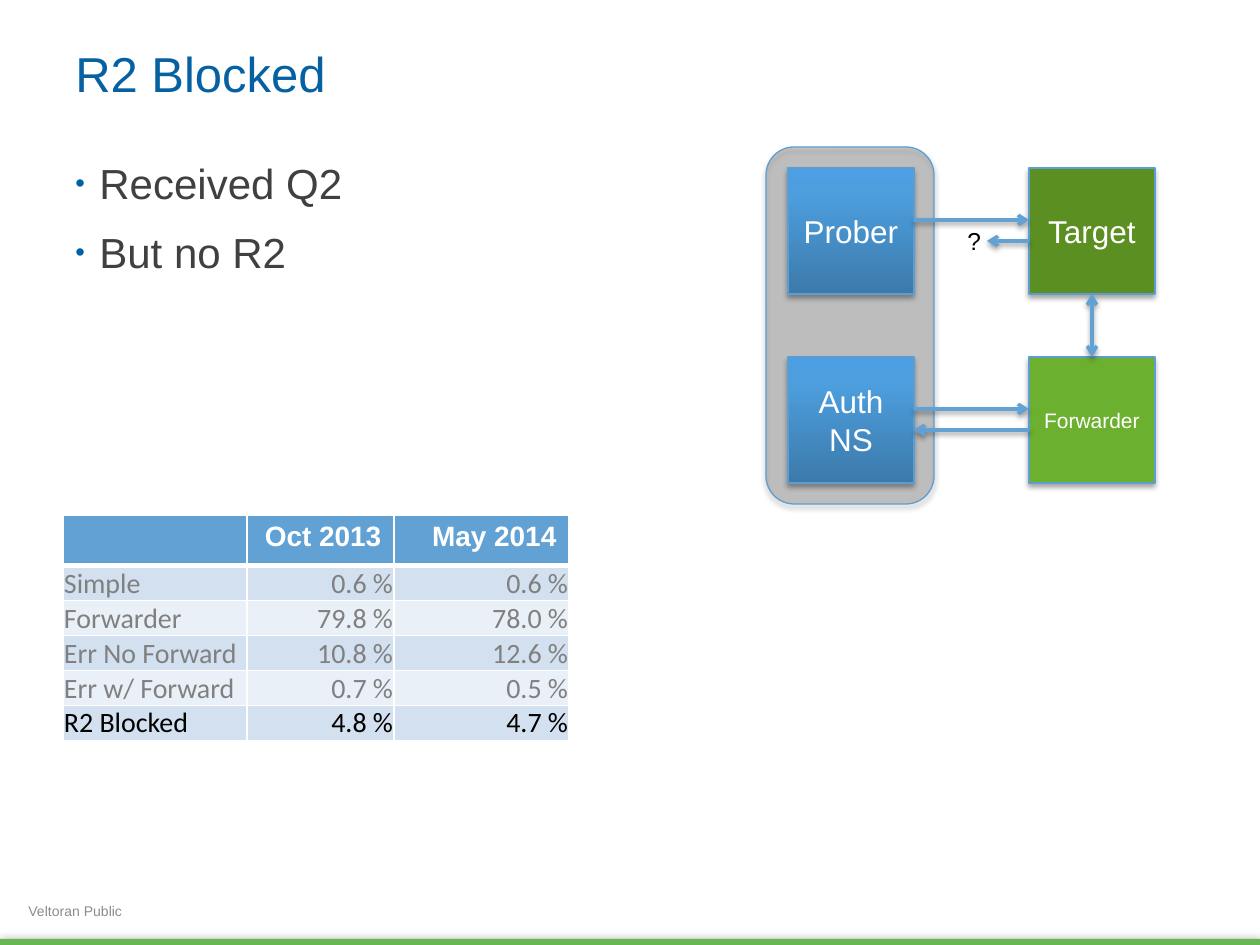
from dataclasses import dataclass
from typing import NamedTuple, Optional

from lxml.etree import SubElement
from pptx import Presentation
from pptx.dml.color import RGBColor as RGB
from pptx.enum.shapes import MSO_CONNECTOR as Conn, MSO_SHAPE as Geo
from pptx.enum.text import MSO_ANCHOR as Anchor, PP_ALIGN as Align
from pptx.oxml.ns import qn
from pptx.util import Emu, Pt


class Shadow(NamedTuple):
    alpha: int
    blur: float
    dist: float
    angle: int


@dataclass(frozen=True)
class Theme:
    font: str = "Arial"
    cell_font: str = "Calibri"
    title: str = "0661A3"
    body: str = "404040"
    bullet: str = "0061A3"
    footer: str = "8C8C8C"
    black: str = "000000"
    white: str = "FFFFFF"
    muted: str = "808080"
    bar: str = "69B453"
    outline: str = "5C9ED2"
    accent: str = "61A1D4"
    target: str = "5B8F22"
    forwarder: str = "6BB02E"
    bands: tuple = ("D2E0EF", "EAF0F7")
    blue: tuple = ((0, "3C7AAB"), (80, "4D9EDE"), (100, "4B9FE2"))
    title_pt: int = 28
    body_pt: int = 24
    box_pt: int = 18
    cell_pt: int = 16
    mark_pt: int = 14
    small_pt: int = 12
    footer_pt: int = 8
    bar_shadow: Shadow = Shadow(40, 5, 0, 0)
    box_shadow: Shadow = Shadow(35, 3.1, 1.8, 90)
    line_shadow: Shadow = Shadow(38, 3.1, 1.6, 90)


T = Theme()


class Node(NamedTuple):
    lines: tuple
    x: int
    y: int
    fill: Optional[str] = None
    size: int = T.box_pt


class Arrow(NamedTuple):
    x1: int
    x2: int
    y: int


class Label(NamedTuple):
    lines: tuple
    box: tuple
    size: int
    color: str
    anchor: Anchor = Anchor.MIDDLE
    wrap: bool = True
    bullets: bool = False


BOX = 126
LEFT, RIGHT, TOP, BOTTOM = 788, 1029, 168, 357
PROBER = Node(("Prober",), LEFT, TOP)
AUTH = Node(("Auth", "NS"), LEFT, BOTTOM)
TARGET = Node(("Target",), RIGHT, TOP, T.target)
FORWARDER = Node(("Forwarder",), RIGHT, BOTTOM, T.forwarder, T.small_pt)
ARROWS = (
    Arrow(LEFT + BOX, RIGHT, 220),
    Arrow(RIGHT, LEFT + BOX, 430),
    Arrow(RIGHT, 987, 241),
    Arrow(LEFT + BOX, RIGHT, 409),
)
LABELS = (
    Label(("Veltoran Public",), (16, 898, 418, 25), T.footer_pt, T.footer),
    Label(("R2 Blocked",), (63, 34, 1134, 77), T.title_pt, T.title),
    Label(("Received Q2", "But no R2"), (63, 149, 506, 724), T.body_pt, T.body,
          Anchor.TOP, bullets=True),
    Label(("?",), (955, 220, 39, 43), T.mark_pt, T.black, Anchor.TOP, wrap=False),
)
ROWS = (
    ("", "Oct 2013", "May 2014"),
    ("Simple", "0.6 %", "0.6 %"),
    ("Forwarder", "79.8 %", "78.0 %"),
    ("Err No Forward", "10.8 %", "12.6 %"),
    ("Err w/ Forward", "0.7 %", "0.5 %"),
    ("R2 Blocked", "4.8 %", "4.7 %"),
)
COLS = (184, 147, 175)
HEAD_H, ROW_H = 45, 35


def px(n: int) -> Emu:
    return Emu(round(n * 914400 / 126))


def add(parent, tag: str, **attrs):
    return SubElement(parent, qn(tag), {k: str(v) for k, v in attrs.items()})


def add_run(p, text: str, size: int, color: str, font=T.font, bold=False) -> None:
    r = p.add_run()
    r.text = text
    r.font.size, r.font.name, r.font.bold = Pt(size), font, bold
    r.font.color.rgb = RGB.from_string(color)


def paragraphs(tf, lines: tuple):
    for i, text in enumerate(lines):
        yield (tf.add_paragraph() if i else tf.paragraphs[0]), text


def set_shadow(sp, shadow: Shadow) -> None:
    spPr = sp._element.spPr
    eff = spPr.find(qn("a:effectLst"))
    if eff is None:
        eff = add(spPr, "a:effectLst")
    out = add(eff, "a:outerShdw", blurRad=Pt(shadow.blur), dist=Pt(shadow.dist),
              dir=shadow.angle * 60000, algn="ctr", rotWithShape=0)
    add(add(out, "a:srgbClr", val=T.black), "a:alpha", val=shadow.alpha * 1000)


def add_box(s, geo, box: tuple, fill: Optional[str], shadow: Shadow, outlined=True):
    sp = s.shapes.add_shape(geo, *map(px, box))
    sp.shadow.inherit = False
    if fill:
        sp.fill.solid()
        sp.fill.fore_color.rgb = RGB.from_string(fill)
    if outlined:
        sp.line.color.rgb = RGB.from_string(T.outline)
        sp.line.width = Pt(0.75)
    else:
        sp.line.fill.background()
    set_shadow(sp, shadow)
    return sp


def set_gradient(sp, stops: tuple) -> None:
    grad = add(sp._element.spPr, "a:gradFill", rotWithShape=1)
    gs_list = add(grad, "a:gsLst")
    for pos, color in stops:
        add(add(gs_list, "a:gs", pos=pos * 1000), "a:srgbClr", val=color)
    add(grad, "a:lin", ang=270 * 60000, scaled=0)
    sp._element.spPr.find(qn("a:prstGeom")).addnext(grad)


def add_node(s, node: Node):
    sp = add_box(s, Geo.RECTANGLE, (node.x, node.y, BOX, BOX), node.fill, T.box_shadow)
    if not node.fill:
        set_gradient(sp, T.blue)
    tf = sp.text_frame
    tf.word_wrap, tf.vertical_anchor = True, Anchor.MIDDLE
    for p, text in paragraphs(tf, node.lines):
        p.alignment = Align.CENTER
        add_run(p, text, node.size, T.white)
    return sp


def add_arrow(s, x1: int, y1: int, x2: int, y2: int, ends=("a:tailEnd",)):
    cn = s.shapes.add_connector(Conn.STRAIGHT, px(x1), px(y1), px(x2), px(y2))
    cn.line.color.rgb = RGB.from_string(T.accent)
    cn.line.width = Pt(2)
    for end in ends:
        add(cn.line._get_or_add_ln(), end, type="arrow")
    set_shadow(cn, T.line_shadow)
    return cn


def add_label(s, label: Label) -> None:
    tf = s.shapes.add_textbox(*map(px, label.box)).text_frame
    tf.word_wrap, tf.vertical_anchor = label.wrap, label.anchor
    for p, text in paragraphs(tf, label.lines):
        if label.bullets:
            p.line_spacing, p.space_before = 1.05, Pt(9)
            pPr = p._p.get_or_add_pPr()
            pPr.set("marL", str(px(24)))
            pPr.set("indent", str(-px(24)))
            add(add(pPr, "a:buClr"), "a:srgbClr", val=T.bullet)
            add(pPr, "a:buSzPct", val=65000)
            add(pPr, "a:buFont", typeface=T.font)
            add(pPr, "a:buChar", char="•")
        add_run(p, text, label.size, label.color)


def fill_cell(cell, text: str, row: int, col: int) -> None:
    head, last = row == 0, row == len(ROWS) - 1
    if not head:
        cell.vertical_anchor = Anchor.BOTTOM
        cell.margin_left = cell.margin_right = cell.margin_top = px(1)
        cell.margin_bottom = 0
    tcPr = cell._tc.get_or_add_tcPr()
    for side in ("L", "R", "T", "B"):
        thick = (head and side == "B") or (row == 1 and side == "T")
        ln = add(tcPr, f"a:ln{side}", w=Pt(3 if thick else 1))
        add(add(ln, "a:solidFill"), "a:srgbClr", val=T.white)
    cell.fill.solid()
    cell.fill.fore_color.rgb = RGB.from_string(T.accent if head else T.bands[(row - 1) % 2])
    p = cell.text_frame.paragraphs[0]
    p.alignment = Align.RIGHT if col else Align.LEFT
    if text:
        color = T.white if head else T.black if last else T.muted
        add_run(p, text, T.cell_pt, color, T.font if head else T.cell_font, head)


def add_results(s) -> None:
    height = HEAD_H + ROW_H * (len(ROWS) - 1)
    tbl = s.shapes.add_table(len(ROWS), len(COLS), px(63), px(515), px(sum(COLS)), px(height)).table
    for col, width in zip(tbl.columns, COLS):
        col.width = px(width)
    for i, values in enumerate(ROWS):
        tbl.rows[i].height = px(ROW_H if i else HEAD_H)
        for j, text in enumerate(values):
            fill_cell(tbl.cell(i, j), text, i, j)


def main() -> None:
    prs = Presentation()
    prs.slide_width, prs.slide_height = px(1260), px(945)
    s = prs.slides.add_slide(prs.slide_layouts[6])
    add_box(s, Geo.RECTANGLE, (0, 939, 1260, 6), T.bar, T.bar_shadow, outlined=False)
    group = add_box(s, Geo.ROUNDED_RECTANGLE, (766, 147, 168, 357), T.black, T.box_shadow)
    add(group._element.spPr.find(qn("a:solidFill"))[0], "a:alpha", val=20000)
    for node in (PROBER, AUTH):
        add_node(s, node)
    target, forwarder = add_node(s, TARGET), add_node(s, FORWARDER)
    for a in ARROWS:
        add_arrow(s, a.x1, a.y, a.x2, a.y)
    mid = RIGHT + BOX // 2
    link = add_arrow(s, mid, TOP + BOX, mid, BOTTOM, ("a:headEnd", "a:tailEnd"))
    link.begin_connect(target, 2)
    link.end_connect(forwarder, 0)
    for label in LABELS:
        add_label(s, label)
    add_results(s)
    prs.save("out.pptx")


if __name__ == "__main__":
    main()
